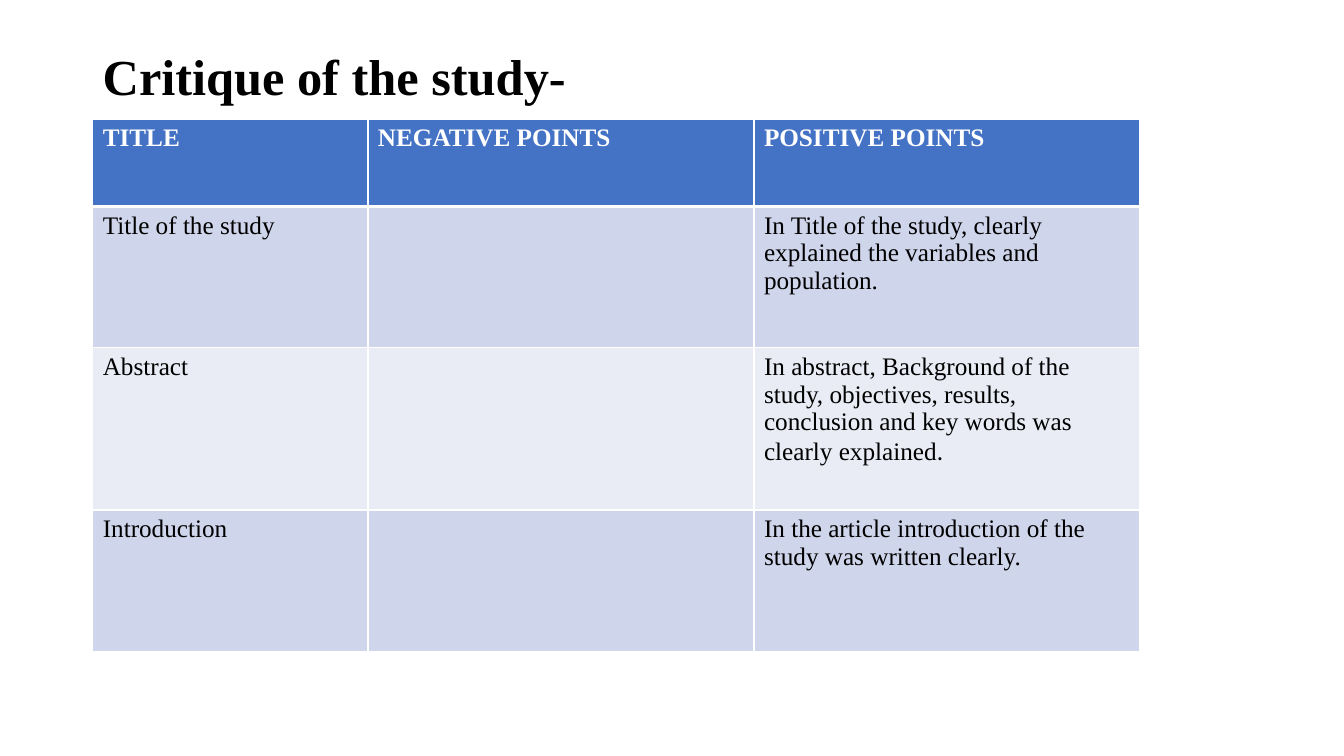
from lxml.etree import SubElement
from pptx import Presentation
from pptx.dml.color import RGBColor
from pptx.enum.text import MSO_ANCHOR
from pptx.oxml.ns import qn
from pptx.util import Pt

HEADING = "Critique of the study-"
# Each cell is a list of (text, font) spans.
SERIF, SANS = "Times New Roman", "Calibri"
ROWS = [
    [[("TITLE", SERIF)], [("NEGATIVE POINTS", SERIF)], [("POSITIVE POINTS", SERIF)]],
    [[("Title of the study", SERIF)], [],
     [("In Title of the study, clearly explained the variables and population.", SERIF)]],
    [[("Abstract", SERIF)], [],
     [("In abstract, Background of the study, objectives, results, conclusion "
       "and key words was clearly explained", SERIF), (".", SANS)]],
    [[("Introduction", SERIF)], [],
     [("In the article introduction of the study was written clearly.", SERIF)]],
]
COLORS = {"header": "4472C4", "odd": "CFD5EA", "even": "E9EBF5",
          "white": "FFFFFF", "black": "000000"}
LEFT = 66.24
TITLE_TOP, TITLE_WIDTH, TITLE_HEIGHT = 28.8, 828, 56.16
TABLE_TOP = 85
COLUMN_WIDTHS = [196.56, 275.76, 275.76]
ROW_HEIGHTS = [62.5, 100.8, 116, 100.8]
THIN, THICK = 1, 3


def color(name):
    return RGBColor.from_string(COLORS[name])


def add_span(para, text, font_name, size, color_name, bold):
    span = para.add_run()
    span.text = text
    span.font.color.rgb = color(color_name)
    for key, value in {"name": font_name, "size": Pt(size), "bold": bold}.items():
        setattr(span.font, key, value)


def set_borders(cell, widths):
    """Draw white cell edges; widths maps the edge letter to points."""
    properties = cell._tc.get_or_add_tcPr()
    for position, (edge, width) in enumerate(widths.items()):
        line = properties.makeelement(qn(f"a:ln{edge}"), {"w": str(Pt(width))})
        fill = SubElement(line, qn("a:solidFill"))
        SubElement(fill, qn("a:srgbClr"), val=COLORS["white"])
        properties.insert(position, line)


def add_heading(page):
    box = page.shapes.add_textbox(Pt(LEFT), Pt(TITLE_TOP), Pt(TITLE_WIDTH), Pt(TITLE_HEIGHT))
    frame = box.text_frame
    frame.word_wrap = True
    frame.vertical_anchor = MSO_ANCHOR.MIDDLE
    para = frame.paragraphs[0]
    para.line_spacing = 0.9
    add_span(para, HEADING, SERIF, 36, "black", True)


def add_critique_table(page):
    table = page.shapes.add_table(
        len(ROWS), len(COLUMN_WIDTHS), Pt(LEFT), Pt(TABLE_TOP),
        Pt(sum(COLUMN_WIDTHS)), Pt(sum(ROW_HEIGHTS))).table
    for column, width in zip(table.columns, COLUMN_WIDTHS):
        column.width = Pt(width)
    for row_index, (row, height) in enumerate(zip(ROWS, ROW_HEIGHTS)):
        table.rows[row_index].height = Pt(height)
        is_header = row_index == 0
        fill_name = "header" if is_header else ("odd" if row_index % 2 else "even")
        edges = {"L": THIN, "R": THIN,
                 "T": THICK if row_index == 1 else THIN,
                 "B": THICK if is_header else THIN}
        for column_index, spans in enumerate(row):
            cell = table.cell(row_index, column_index)
            cell.fill.solid()
            cell.fill.fore_color.rgb = color(fill_name)
            set_borders(cell, edges)
            for text, font_name in spans:
                add_span(cell.text_frame.paragraphs[0], text, font_name, 18,
                         "white" if is_header else "black", is_header)


def main():
    deck = Presentation()
    deck.slide_width, deck.slide_height = Pt(960), Pt(540)
    page = deck.slides.add_slide(deck.slide_layouts[6])
    add_heading(page)
    add_critique_table(page)
    deck.save("out.pptx")


if __name__ == "__main__":
    main()
